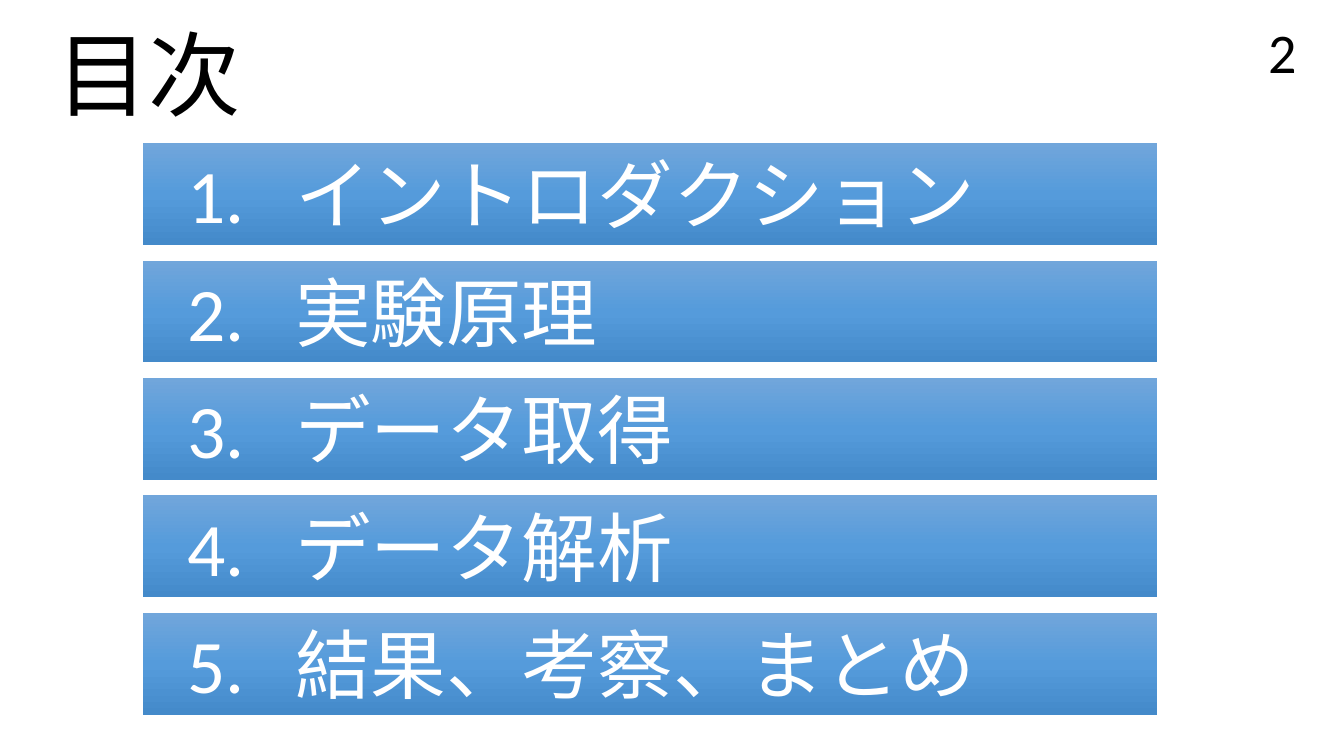
import pptx
import pptx.util
from pptx.dml.color import RGBColor
from pptx.enum.shapes import MSO_SHAPE
from pptx.enum.text import MSO_ANCHOR, MSO_AUTO_SIZE, PP_ALIGN

Pt = pptx.util.Pt

TITLE = "目次"
PAGE_NUMBER = "2"
CHAPTERS = ["イントロダクション", "実験原理", "データ取得", "データ解析", "結果、考察、まとめ"]

FONT = "Calibri"
COLORS = {
    "text": "000000",
    "bar_text": "FFFFFF",
    "bar_top": "71A6DB",
    "bar_middle": "559BDB",
    "bar_bottom": "448ACA",
}

BAR_LEFT, BAR_TOP, BAR_WIDTH, BAR_HEIGHT = 102.2, 102.2, 724.3, 72.7
BAR_PITCH = 83.9
NUMBER_INDENT, CHAPTER_INDENT = 24.4, 101.6


def add_run(paragraph, text, size, color):
    run = paragraph.add_run()
    run.text = text
    run.font.name = FONT
    run.font.size = Pt(size)
    run.font.color.rgb = RGBColor.from_string(COLORS[color])


def fill_with_gradient(shape):
    """Shade a shape from top to bottom through the three bar colours."""
    shape.fill.gradient()
    stop_list = shape.fill._fill._gradFill.gsLst
    for stop in list(stop_list):
        stop_list.remove(stop)
    for position, name in ((0, "bar_top"), (50, "bar_middle"), (100, "bar_bottom")):
        stop = stop_list.makeelement(pptx.oxml.ns.qn("a:gs"), {"pos": str(position * 1000)})
        color = stop.makeelement(pptx.oxml.ns.qn("a:srgbClr"), {"val": COLORS[name]})
        stop.append(color)
        stop_list.append(stop)
    shape.fill.gradient_angle = 270


def add_title(slide):
    title = slide.shapes.title
    title.left, title.top, title.width, title.height = Pt(33.1), Pt(8.6), Pt(147.6), Pt(87.1)
    frame = title.text_frame
    frame.word_wrap = False
    frame.auto_size = MSO_AUTO_SIZE.SHAPE_TO_FIT_TEXT
    frame.vertical_anchor = MSO_ANCHOR.TOP
    paragraph = frame.paragraphs[0]
    paragraph.alignment = PP_ALIGN.LEFT
    add_run(paragraph, TITLE, 66, "text")


def add_page_number(slide):
    box = slide.shapes.add_textbox(Pt(717.1), Pt(22.3), Pt(216), Pt(28.8))
    frame = box.text_frame
    frame.word_wrap = True
    frame.vertical_anchor = MSO_ANCHOR.MIDDLE
    paragraph = frame.paragraphs[0]
    paragraph.alignment = PP_ALIGN.RIGHT
    add_run(paragraph, PAGE_NUMBER, 40, "text")


def add_chapter_bar(slide, index, chapter):
    bar = slide.shapes.add_shape(
        MSO_SHAPE.RECTANGLE,
        Pt(BAR_LEFT), Pt(BAR_TOP + index * BAR_PITCH), Pt(BAR_WIDTH), Pt(BAR_HEIGHT))
    bar.shadow.inherit = False
    bar.line.fill.background()
    fill_with_gradient(bar)
    frame = bar.text_frame
    frame.word_wrap = True
    frame.auto_size = MSO_AUTO_SIZE.SHAPE_TO_FIT_TEXT
    frame.vertical_anchor = MSO_ANCHOR.TOP
    paragraph = frame.paragraphs[0]
    paragraph.alignment = PP_ALIGN.LEFT
    properties = paragraph._p.get_or_add_pPr()
    properties.set("marL", str(Pt(CHAPTER_INDENT)))
    properties.set("indent", str(Pt(NUMBER_INDENT - CHAPTER_INDENT)))
    add_run(paragraph, f"{index + 1}.\t{chapter}", 54, "bar_text")


def main():
    presentation = pptx.Presentation()
    presentation.slide_width, presentation.slide_height = Pt(960), Pt(540)
    slide = presentation.slides.add_slide(presentation.slide_layouts[5])
    add_title(slide)
    add_page_number(slide)
    for index, chapter in enumerate(CHAPTERS):
        add_chapter_bar(slide, index, chapter)
    presentation.save("out.pptx")


if __name__ == "__main__":
    main()
